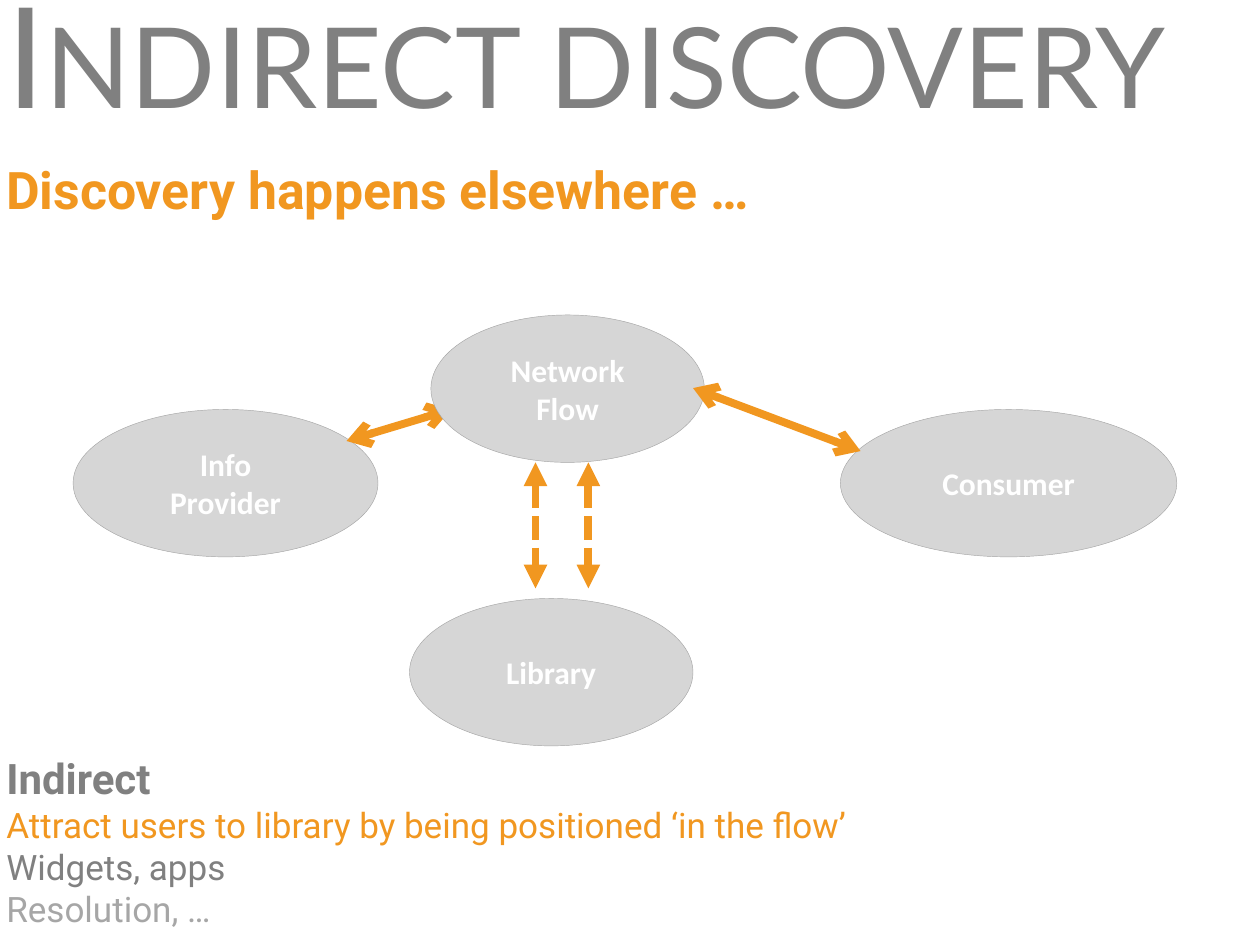
from dataclasses import dataclass
from typing import Any

from lxml.etree import SubElement
from pptx import Presentation
from pptx.dml.color import RGBColor as Rgb
from pptx.enum.dml import MSO_LINE as Dash
from pptx.enum.shapes import MSO_CONNECTOR as Conn, MSO_SHAPE as Preset
from pptx.enum.text import MSO_ANCHOR as Anchor, MSO_AUTO_SIZE as Fit, PP_ALIGN as Align
from pptx.oxml.ns import qn
from pptx.util import Inches, Pt


@dataclass(frozen=True)
class Theme:
    orange: str = "F19720"
    dark: str = "808080"
    light: str = "A6A6A6"
    pale: str = "D6D6D6"
    white: str = "FFFFFF"
    title: float = 80
    lead: float = 29.6
    head: float = 24
    body: float = 20
    label: float = 18
    edge: float = 0.25
    arrow: float = 4.5


THEME = Theme()
LEFT = -0.05
NODE_TOP, NODE_HIGH = 3.25, 1.17


@dataclass(frozen=True)
class Style:
    font: str
    size: float
    color: str
    bold: bool = False


@dataclass(frozen=True)
class Node:
    label: str
    left: float
    top: float
    width: float


@dataclass(frozen=True)
class Link:
    start: tuple[float, float]
    end: tuple[float, float]
    head: str = "arrow"
    dashed: bool = False


@dataclass(frozen=True)
class Line:
    text: str
    top: float
    high: float
    style: Style


LABEL = Style("Calibri", THEME.label, THEME.white, True)
SIDES = [
    Node("Info\nProvider", 0.58, NODE_TOP, 2.42),
    Node("Consumer", 6.67, NODE_TOP, 2.67),
    Node("Network Flow", 3.42, 2.5, 2.17),
]
HUB = Node("Library", 3.25, 4.75, 2.25)
LEFT_LINK = Link((3.58, 3.25), (2.75, 3.5))
RIGHT_LINK = Link((6.83, 3.58), (5.5, 3.08))
DOWN_LINKS = [Link((x, 3.67), (x, 4.67), "triangle", True) for x in (4.25, 4.67)]
LINES = [
    Line("Indirect", 5.92, 0.5, Style("Roboto", THEME.head, THEME.dark, True)),
    Line("Attract users to library by being positioned ‘in the flow’", 6.33, 0.42,
         Style("Roboto", THEME.body, THEME.orange)),
    Line("Widgets, apps", 6.67, 0.42, Style("Roboto", THEME.body, THEME.dark)),
    Line("Resolution, …", 7, 0.42, Style("Roboto", THEME.body, THEME.light)),
]


def place(shape: Any, left: float, top: float, width: float, high: float) -> None:
    shape.left, shape.top = Inches(left), Inches(top)
    shape.width, shape.height = Inches(width), Inches(high)


def write(shape: Any, text: str, style: Style, align: Align, anchor: Anchor) -> Any:
    """Fill the shape with one paragraph, broken at newlines, and return it."""
    frame = shape.text_frame
    frame.word_wrap, frame.auto_size = True, Fit.NONE
    frame.vertical_anchor = anchor
    para = frame.paragraphs[0]
    para.alignment = align
    for i, part in enumerate(text.split("\n")):
        if i:
            para.add_line_break()
        run = para.add_run()
        run.text = part
        font = run.font
        font.name, font.size, font.bold = style.font, Pt(style.size), style.bold
        font.color.rgb = Rgb.from_string(style.color)
    return para


def draw_node(shapes: Any, node: Node) -> None:
    oval = shapes.add_shape(Preset.OVAL, Inches(node.left), Inches(node.top),
                            Inches(node.width), Inches(NODE_HIGH))
    oval.shadow.inherit = False
    oval.fill.solid()
    oval.fill.fore_color.rgb = Rgb.from_string(THEME.pale)
    oval.line.color.rgb = Rgb.from_string(THEME.light)
    oval.line.width = Pt(THEME.edge)
    write(oval, node.label, LABEL, Align.CENTER, Anchor.MIDDLE)


def draw_link(shapes: Any, link: Link) -> None:
    ends = [Inches(v) for v in (*link.start, *link.end)]
    wire = shapes.add_connector(Conn.STRAIGHT, *ends)
    wire.line.color.rgb = Rgb.from_string(THEME.orange)
    wire.line.width = Pt(THEME.arrow)
    if link.dashed:
        wire.line.dash_style = Dash.SQUARE_DOT
    props = wire.line._get_or_add_ln()
    for tag in ("a:headEnd", "a:tailEnd"):
        SubElement(props, qn(tag), type=link.head)
    SubElement(wire._element.spPr, qn("a:effectLst"))


def draw_line(holder: Any, line: Line) -> None:
    place(holder, LEFT, line.top, 10.05, line.high)
    para = write(holder, line.text, line.style, Align.LEFT, Anchor.MIDDLE)
    para.space_before = Pt(line.style.size * 0.2)
    props = para._p.get_or_add_pPr()
    props.set("marL", str(Inches(0.38)))
    props.set("indent", str(Inches(-0.38)))
    SubElement(props, qn("a:buNone"))


def main() -> None:
    deck = Presentation()
    deck.slide_width, deck.slide_height = Inches(10), Inches(7.5)
    slide = deck.slides.add_slide(deck.slide_layouts.get_by_name("Comparison"))
    shapes = slide.shapes
    title, *holders = slide.placeholders

    draw_node(shapes, SIDES[0])
    draw_link(shapes, LEFT_LINK)
    group = shapes.add_group_shape().shapes
    draw_node(group, HUB)
    for link in DOWN_LINKS:
        draw_link(group, link)
    for node in SIDES[1:]:
        draw_node(shapes, node)
    draw_link(shapes, RIGHT_LINK)

    place(title, LEFT, -0.3, 10, 1.4)
    style = Style("Lato", THEME.title, THEME.dark)
    para = write(title, "Indirect discovery", style, Align.LEFT, Anchor.TOP)
    para.runs[0].font._element.set("cap", "small")

    lead = shapes.add_textbox(Inches(LEFT), Inches(1.2), Inches(7), Inches(0.7))
    style = Style("Roboto", THEME.lead, THEME.orange, True)
    write(lead, "Discovery happens elsewhere …", style, Align.LEFT, Anchor.TOP)

    for holder, line in zip(holders, LINES):
        draw_line(holder, line)
    deck.save("out.pptx")


if __name__ == "__main__":
    main()
